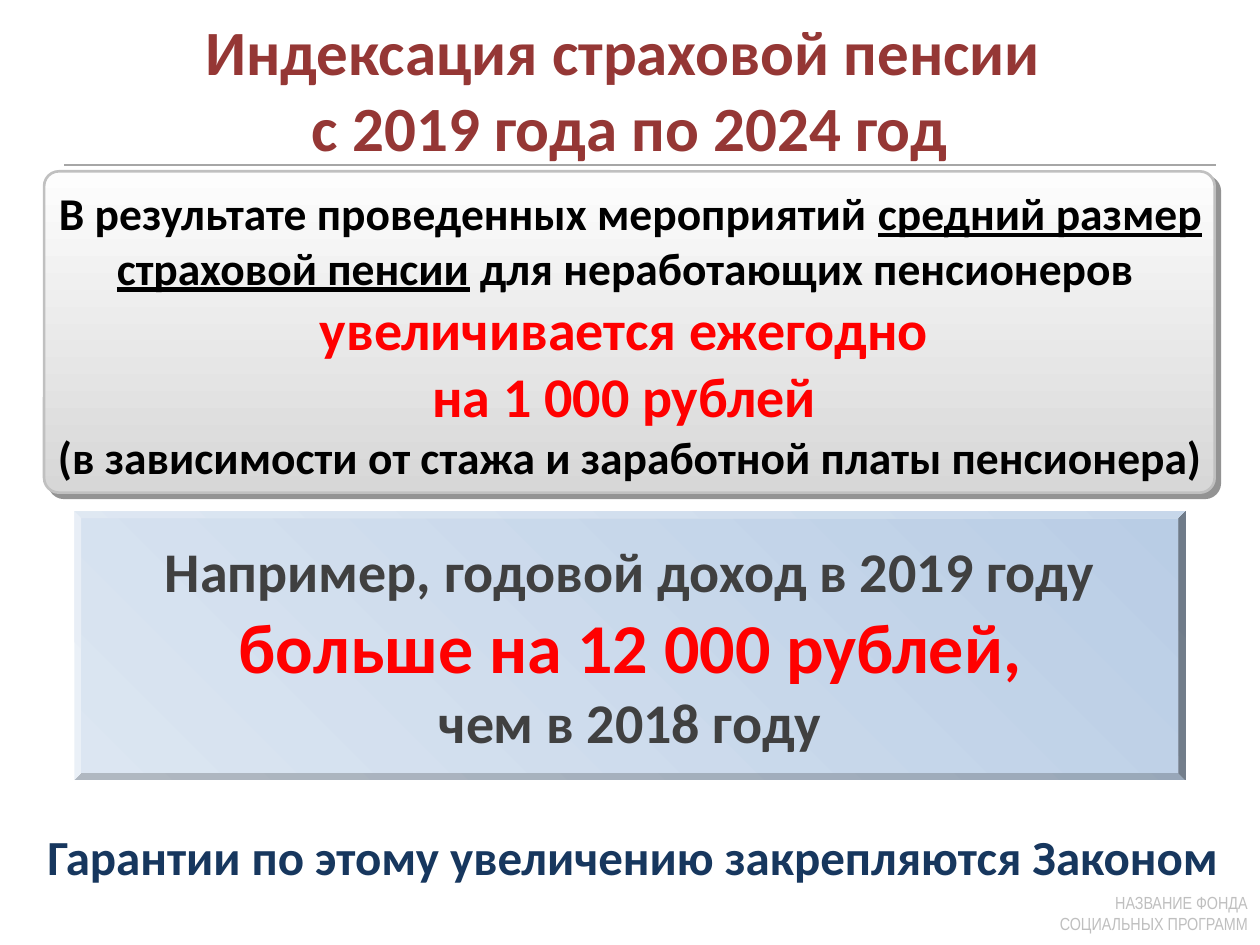
from typing import NamedTuple, Optional

from lxml.etree import SubElement
from pptx import Presentation
from pptx.dml.color import RGBColor
from pptx.enum.shapes import MSO_CONNECTOR, MSO_SHAPE
from pptx.enum.text import MSO_ANCHOR, MSO_AUTO_SIZE, PP_ALIGN
from pptx.oxml.ns import qn
from pptx.util import Pt

RULE_GRAY = RGBColor(0xA6, 0xA6, 0xA6)
FOOTER_GRAY = RGBColor(0xBF, 0xBF, 0xBF)
TITLE_RED = RGBColor(0x95, 0x37, 0x35)
BLACK = RGBColor(0, 0, 0)
RED = RGBColor(0xFF, 0, 0)
DARK_GRAY = RGBColor(0x40, 0x40, 0x40)
NAVY = RGBColor(0x17, 0x37, 0x5E)
PANEL_TOP = RGBColor(0xFD, 0xFD, 0xFD)
PANEL_BOTTOM = RGBColor(0xD7, 0xD7, 0xD7)
PANEL_EDGE = RGBColor(0xC0, 0xC0, 0xC0)
SHADOW = RGBColor(0x29, 0x29, 0x29)
BEVEL_LIGHT = RGBColor(0xDC, 0xE6, 0xF2)
BEVEL_DARK = RGBColor(0xB9, 0xCD, 0xE5)


class Box(NamedTuple):
    """Left, top, width and height in points."""
    left: float
    top: float
    width: float
    height: float

    def lengths(self) -> list:
        return [Pt(value) for value in self]


class Span(NamedTuple):
    """A run of text; each newline becomes a line break."""
    text: str
    size: float
    color: RGBColor
    underline: bool = False
    font: str = "Calibri"
    bold: bool = True


def write(shape, paragraphs: list[list[Span]], align=PP_ALIGN.CENTER,
          anchor=MSO_ANCHOR.TOP) -> None:
    frame = shape.text_frame
    frame.word_wrap = True
    frame.auto_size = MSO_AUTO_SIZE.NONE
    frame.vertical_anchor = anchor
    for index, spans in enumerate(paragraphs):
        paragraph = frame.add_paragraph() if index else frame.paragraphs[0]
        paragraph.alignment = align
        for span in spans:
            for number, line in enumerate(span.text.split("\n")):
                if number:
                    paragraph.add_line_break()
                if not line:
                    continue
                run = paragraph.add_run()
                run.text = line
                run.font.name = span.font
                run.font.size = Pt(span.size)
                run.font.bold = span.bold
                run.font.underline = span.underline
                run.font.color.rgb = span.color


def add_text(slide, box: Box, spans: list[Span], align=PP_ALIGN.CENTER) -> None:
    write(slide.shapes.add_textbox(*box.lengths()), [spans], align)


def add_panel(slide, kind, box: Box, corner: float, start: RGBColor,
              end: RGBColor, angle: float, edge: Optional[RGBColor] = None):
    shape = slide.shapes.add_shape(kind, *box.lengths())
    shape.adjustments[0] = corner
    shape.fill.gradient()
    shape.fill.gradient_angle = angle
    for stop, color in zip(shape.fill.gradient_stops, (start, end)):
        stop.color.rgb = color
    if edge is None:
        shape.line.fill.background()
    else:
        shape.line.color.rgb = edge
        shape.line.width = Pt(1.5)
    shape.shadow.inherit = False
    return shape


def add_hard_shadow(shape, color: RGBColor, distance: float) -> None:
    effects = shape.element.spPr.find(qn("a:effectLst"))
    shadow = SubElement(effects, qn("a:outerShdw"), blurRad="0",
                        dist=str(Pt(distance)), dir=str(45 * 60000),
                        algn="ctr", rotWithShape="0")
    tint = SubElement(shadow, qn("a:srgbClr"), val=str(color))
    SubElement(tint, qn("a:alpha"), val="50000")


def main() -> None:
    presentation = Presentation()
    presentation.slide_width, presentation.slide_height = Pt(720), Pt(540)
    slide = presentation.slides.add_slide(presentation.slide_layouts[5])

    # Rule under the title
    rule = slide.shapes.add_connector(
        MSO_CONNECTOR.STRAIGHT, Pt(36.7), Pt(94.3), Pt(694.8), Pt(94.3))
    rule.line.color.rgb = RULE_GRAY
    rule.line.width = Pt(1.5)
    SubElement(rule.element.spPr, qn("a:effectLst"))

    # Footer
    add_text(slide, Box(589.7, 506.2, 130.3, 31.7),
             [Span("НАЗВАНИЕ ФОНДА СОЦИАЛЬНЫХ ПРОГРАММ", 10, FOOTER_GRAY,
                   font="Arial Narrow", bold=False)], PP_ALIGN.RIGHT)

    # Title
    title = slide.shapes.title
    title.left, title.top, title.width, title.height = Box(0, 3.6, 720, 94.3).lengths()
    write(title, [[Span("Индексация страховой пенсии \nc 2019 года по 2024 год",
                        36, TITLE_RED)]])

    # Yearly increase
    panel = add_panel(slide, MSO_SHAPE.ROUNDED_RECTANGLE, Box(25.2, 97.9, 668.9, 183.6),
                      0.046, PANEL_TOP, PANEL_BOTTOM, 270, PANEL_EDGE)
    add_hard_shadow(panel, SHADOW, 4.2)
    add_text(slide, Box(20.2, 102.2, 680.4, 179.3), [
        Span("В результате проведенных мероприятий ", 26, BLACK),
        Span("средний размер страховой пенсии", 26, BLACK, underline=True),
        Span(" для неработающих пенсионеров  ", 26, BLACK),
        Span("увеличивается ежегодно \nна 1 000 рублей \n", 32, RED),
        Span("(в зависимости от стажа и заработной платы пенсионера)", 26, BLACK),
    ])

    # Example
    example = add_panel(slide, MSO_SHAPE.BEVEL, Box(42.5, 292.3, 635, 153.4),
                        0.025, BEVEL_LIGHT, BEVEL_DARK, 45)
    write(example, [
        [Span("Например, годовой доход в 2019 году", 32, DARK_GRAY)],
        [Span("больше на 12 000 рублей,", 40, RED)],
        [Span("чем в 2018 году", 32, DARK_GRAY)],
    ], anchor=MSO_ANCHOR.MIDDLE)

    # Conclusion
    add_text(slide, Box(2.9, 468.7, 717.1, 41),
             [Span("Гарантии по этому увеличению закрепляются Законом", 28, NAVY)])

    presentation.save("out.pptx")


if __name__ == "__main__":
    main()
